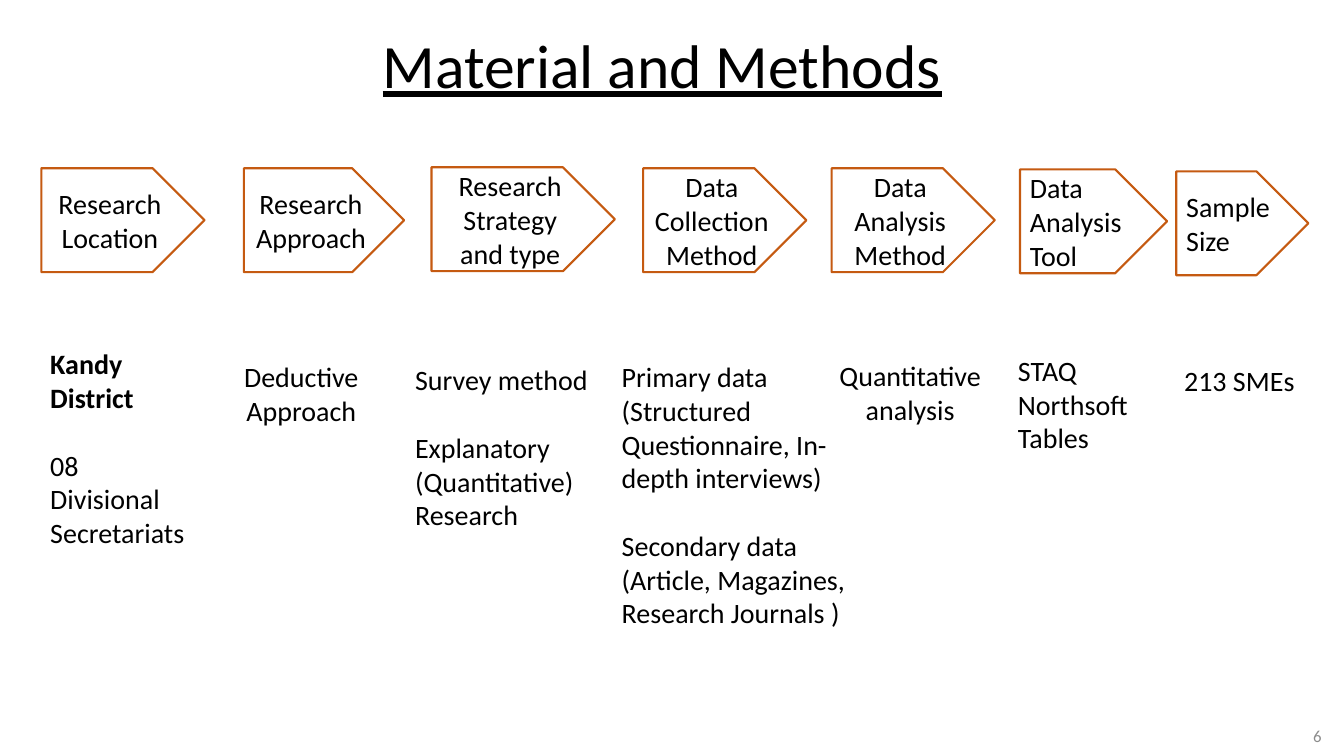
from pptx import Presentation
from pptx.dml.color import RGBColor
from pptx.enum import shapes, text
from pptx.util import Pt

COLORS = {"ink": "000000", "edge": "C55A11", "fill": "FFFFFF", "page": "8C8C8C"}
LEFT, MID, RIGHT, JUST = (text.PP_ALIGN.LEFT, text.PP_ALIGN.CENTER,
                          text.PP_ALIGN.RIGHT, text.PP_ALIGN.JUSTIFY)
LINE = 24.4


class Deck:
    def __init__(self, wide, high):
        self.file = Presentation()
        self.file.slide_width, self.file.slide_height = Pt(wide), Pt(high)
        self.slide = self.file.slides.add_slide(self.file.slide_layouts[6])
        self.face = "Calibri"

    def color(self, name):
        return RGBColor.from_string(COLORS[name])

    def label(self, shape, lines, align, size=20, ink="ink", gap=0):
        frame = shape.text_frame
        frame.word_wrap = True
        frame.vertical_anchor = text.MSO_ANCHOR.MIDDLE
        for row, line in enumerate(lines):
            para = frame.add_paragraph() if row else frame.paragraphs[0]
            para.text = line
            para.alignment = align
            if row and gap:
                para.space_before = Pt(gap)
            para.font.name = self.face
            para.font.size = Pt(size)
            para.font.color.rgb = self.color(ink)
        return frame

    def note(self, box, lines, align, foot=0, **style):
        shape = self.slide.shapes.add_textbox(*map(Pt, box))
        frame = self.label(shape, lines, align, **style)
        if foot:
            frame.margin_bottom = Pt(3.6 + foot)
        return frame.paragraphs[0]

    def arrow(self, box, words, align):
        shape = self.slide.shapes.add_shape(
            shapes.MSO_SHAPE.PENTAGON, *map(Pt, box))
        shape.shadow.inherit = False
        shape.fill.solid()
        shape.fill.fore_color.rgb = self.color("fill")
        shape.line.color.rgb = self.color("edge")
        shape.line.width = Pt(1.5)
        self.label(shape, [words], align)


STEPS = [
    (29.5, 120.2, 116.6, "Research Location", MID),
    (174.2, 120.2, 114.5, "Research Approach", MID),
    (308.2, 119.5, 131, "Research Strategy and type", MID),
    (459.4, 120.2, 116.6, "Data Collection Method", MID),
    (594, 120.2, 116.6, "Data Analysis Method", MID),
    (728.6, 121, 105.1, "Data Analysis Tool", JUST),
    (840.2, 122.4, 94.3, "Sample Size", JUST),
]


def main():
    deck = Deck(960, 540)
    title = deck.note((59, -3.6, 828, 104.4), ["Material and Methods"], MID, size=44)
    title.font.underline = True
    title.line_spacing = 0.9
    deck.note((735.1, 511.2, 216, 28.8), ["6"], RIGHT, size=12, ink="page")

    for left, top, wide, words, align in STEPS:
        deck.arrow((left, top, wide, 74.2), words, align)

    place = deck.note((28.8, 234, 114.5, 172.1),
                      ["Kandy District", "08 Divisional Secretariats"], JUST, gap=LINE)
    place.font.bold = True
    deck.note((149, 241.2, 132.5, 79.2), ["Deductive Approach"], MID)
    deck.note((289.4, 226.1, 148.3, 211),
              ["Survey method", "Explanatory (Quantitative) Research"],
              JUST, foot=LINE, gap=LINE)
    deck.note((437, 239.8, 176.4, 226.8),
              ["Primary data (Structured Questionnaire, In-depth interviews)",
               "Secondary data (Article, Magazines, Research Journals )"],
              LEFT, gap=LINE)
    deck.note((580.3, 249.1, 139.7, 61.9), ["Quantitative analysis"], MID)
    deck.note((720, 248.4, 131.8, 105.1), ["STAQ", "Northsoft Tables"], JUST, foot=LINE)
    deck.note((823, 252, 124.6, 39.6), ["213 SMEs"], MID)

    deck.file.save("out.pptx")


if __name__ == "__main__":
    main()
